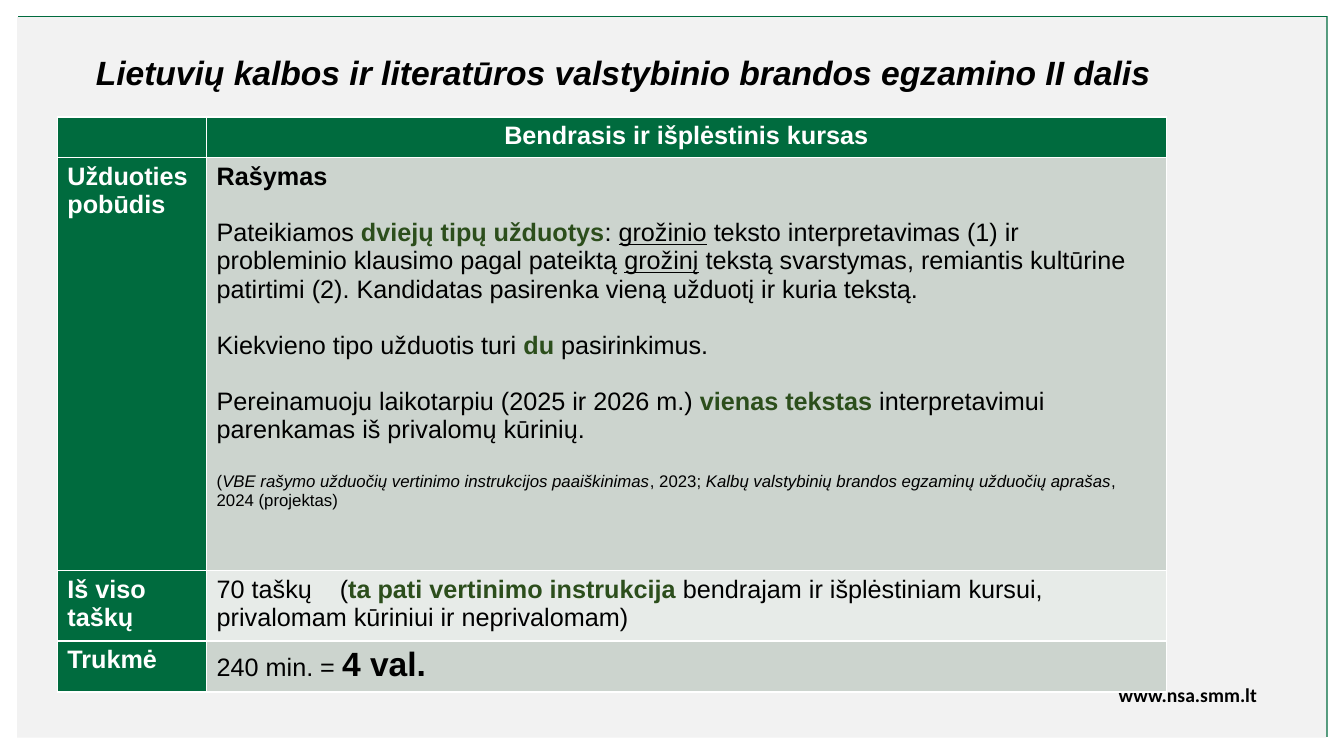
from pptx import Presentation
from pptx.dml.color import RGBColor
from pptx.enum.shapes import MSO_SHAPE
from pptx.enum.text import MSO_ANCHOR, MSO_AUTO_SIZE, PP_ALIGN
from pptx.oxml import parse_xml
from pptx.oxml.ns import nsdecls
from pptx.util import Pt

GREEN = RGBColor(0x00, 0x6B, 0x3E)
PANEL = RGBColor(0xF2, 0xF2, 0xF2)
BAND_DARK = RGBColor(0xCC, 0xD4, 0xCE)
BAND_LIGHT = RGBColor(0xE7, 0xEB, 0xE8)
ACCENT = RGBColor(0x2C, 0x4E, 0x1C)
BLACK = RGBColor(0x00, 0x00, 0x00)
WHITE = RGBColor(0xFF, 0xFF, 0xFF)

# Each paragraph is a list of (text, style) spans
TASK = [
    [("Rašymas", "bold")],
    [("Pateikiamos ", ""), ("dviejų tipų užduotys", "accent"), (": ", ""),
     ("grožinio", "underline"),
     (" teksto interpretavimas (1) ir probleminio klausimo pagal pateiktą ", ""),
     ("grožinį", "underline"),
     (" tekstą svarstymas, remiantis kultūrine patirtimi (2). "
      "Kandidatas pasirenka vieną užduotį ir kuria tekstą.", "")],
    [("Kiekvieno tipo užduotis turi ", ""), ("du ", "accent"), ("pasirinkimus.", "")],
    [("Pereinamuoju laikotarpiu (2025 ir 2026 m.) ", ""), ("vienas tekstas", "accent"),
     (" interpretavimui parenkamas iš privalomų kūrinių.", "")],
    [("(", "small"),
     ("VBE rašymo užduočių vertinimo instrukcijos paaiškinimas", "small italic"),
     (", 2023; ", "small"),
     ("Kalbų valstybinių brandos egzaminų užduočių aprašas", "small italic"),
     (", 2024 (projektas)", "small")],
]
POINTS = [[("70 taškų\t(", ""), ("ta pati vertinimo instrukcija ", "accent"),
           ("bendrajam ir išplėstiniam kursui, privalomam kūriniui ir neprivalomam)", "")]]
DURATION = [[("240 min. = ", ""), ("4 val.", "large bold")]]

# Row height, label, paragraphs, fill of the right-hand cell
ROWS = [
    (29, "", [[("Bendrasis ir išplėstinis kursas", "header")]], GREEN),
    (295, "Užduoties pobūdis", TASK, BAND_DARK),
    (50, "Iš viso taškų", POINTS, BAND_LIGHT),
    (36.4, "Trukmė", DURATION, BAND_DARK),
]
SIZES = {"small": 12, "large": 24}


def add_span(para, text, style):
    span = para.add_run()
    span.text = text
    words = style.split()
    font = span.font
    font.name = "Arial"
    font.size = Pt(next((SIZES[word] for word in words if word in SIZES), 18))
    font.bold = any(word in ("bold", "accent", "header") for word in words)
    font.italic = "italic" in words
    font.underline = "underline" in words
    font.color.rgb = {"accent": ACCENT, "header": WHITE}.get(style, BLACK)


def fill_cell(cell, paragraphs, color):
    cell.fill.solid()
    cell.fill.fore_color.rgb = color
    frame = cell.text_frame
    for index, spans in enumerate(paragraphs):
        para = frame.add_paragraph() if index else frame.paragraphs[0]
        if index:
            para.space_before = Pt(20)
        for text, style in spans:
            add_span(para, text, style)


deck = Presentation()
deck.slide_width, deck.slide_height = Pt(960), Pt(540)
page = deck.slides.add_slide(deck.slide_layouts[5])

for left, top, color in [(13, 11.5, GREEN), (12.2, 12.2, PANEL)]:
    panel = page.shapes.add_shape(MSO_SHAPE.RECTANGLE, Pt(left), Pt(top), Pt(935.3), Pt(514.8))
    panel.shadow.inherit = False
    panel.fill.solid()
    panel.fill.fore_color.rgb = color
    panel.line.fill.background()

website = page.shapes.add_textbox(Pt(674.6), Pt(484.6), Pt(230.4), Pt(24.5))
website.text_frame.word_wrap = True
para = website.text_frame.paragraphs[0]
para.text = "www.nsa.smm.lt"
para.alignment = PP_ALIGN.RIGHT
para.font.name = "Calibri"
para.font.size = Pt(14)
para.font.bold = True
para.font.color.rgb = BLACK

table = page.shapes.add_table(len(ROWS), 2, Pt(41), Pt(83.5), Pt(792), Pt(410.4)).table
table.first_column = True
table.columns[0].width, table.columns[1].width = Pt(106.6), Pt(685.4)
for index, (height, label, paragraphs, color) in enumerate(ROWS):
    table.rows[index].height = Pt(height)
    fill_cell(table.cell(index, 0), [[(label, "header")]] if label else [], GREEN)
    fill_cell(table.cell(index, 1), paragraphs, color)
table.cell(0, 1).text_frame.paragraphs[0].alignment = PP_ALIGN.CENTER

# Tab stop that sets the bracket apart from the points
points_para = table.cell(2, 1).text_frame.paragraphs[0]
points_para._p.get_or_add_pPr().append(parse_xml(
    f'<a:tabLst {nsdecls("a")}><a:tab pos="{Pt(88)}" algn="l"/></a:tabLst>'))

title = page.shapes.title
title.left, title.top, title.width, title.height = Pt(61.2), Pt(33.8), Pt(819.4), Pt(36)
title.element.getparent().append(title.element)  # in front of the panels
frame = title.text_frame
frame.auto_size = MSO_AUTO_SIZE.NONE
frame.vertical_anchor = MSO_ANCHOR.MIDDLE
para = frame.paragraphs[0]
para.text = "Lietuvių kalbos ir literatūros valstybinio brandos egzamino II dalis"
para.alignment = PP_ALIGN.LEFT
para.font.name = "Arial"
para.font.size = Pt(24)
para.font.bold = True
para.font.italic = True
para.font.color.rgb = BLACK

deck.save("out.pptx")
